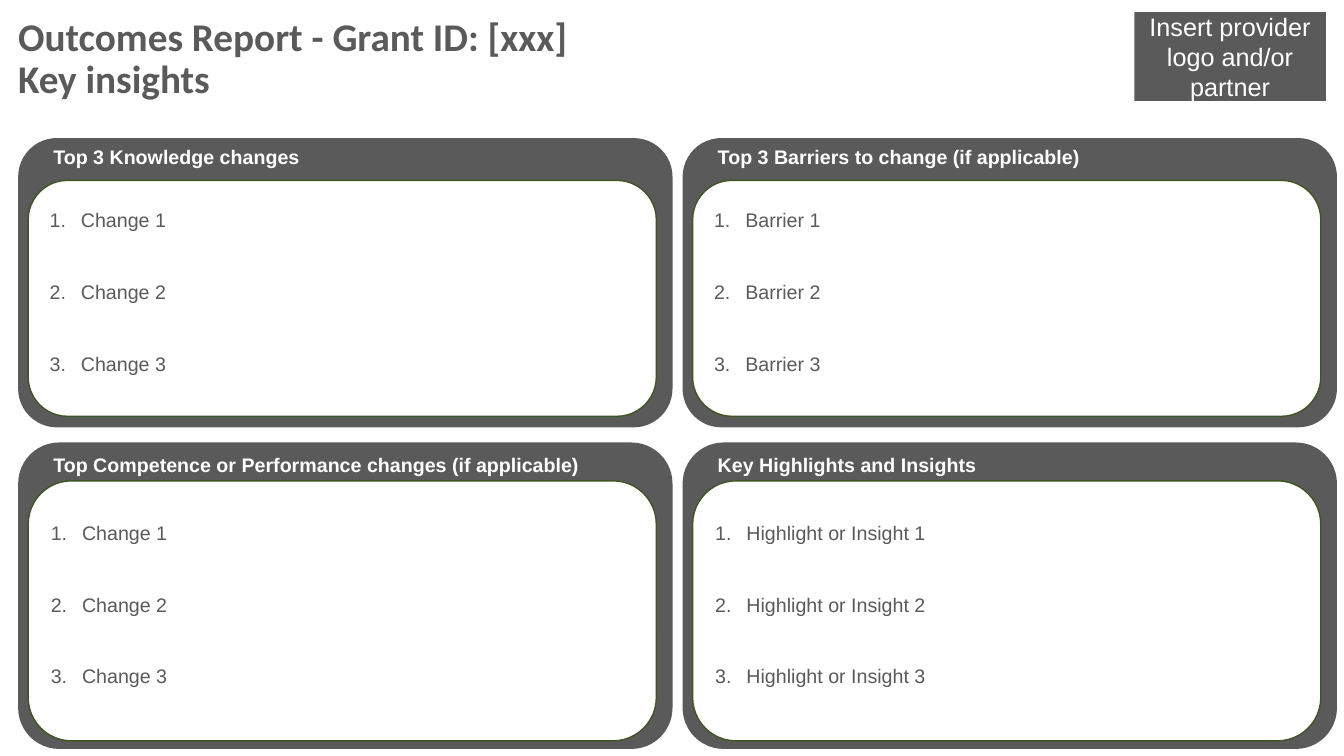
from lxml import etree
from pptx import Presentation
from pptx import util as u
from pptx.dml.color import RGBColor
from pptx.enum import shapes, text
from pptx.oxml.ns import qn

COLOURS = {"grey": "595A59", "white": "FFFFFF", "green": "405524"}
COLUMNS = [0.18, 6.77]
ROWS = [
    {"top": 1.37, "height": 2.87, "card_top": 1.79, "card_height": 2.34, "heading_top": 1.38},
    {"top": 4.39, "height": 3.04, "card_top": 4.77, "card_height": 2.58, "heading_top": 4.44},
]
PANELS = [
    (0, 0, "Top 3 Knowledge changes", "Change"),
    (0, 1, "Top Competence or Performance changes (if applicable)", "Change"),
    (1, 0, "Top 3 Barriers to change (if applicable)", "Barrier"),
    (1, 1, "Key Highlights and Insights", "Highlight or Insight"),
]


class InsightsSlide:
    """Draws styled elements on the current slide."""

    def __init__(self, slide):
        self.slide = slide

    def colour(self, name):
        return RGBColor.from_string(COLOURS[name])

    def add_run(self, paragraph, wording, size, colour, bold=False, font="Arial"):
        run = paragraph.add_run()
        run.text = wording
        run.font.name = font
        run.font.size = u.Pt(size)
        run.font.bold = bold
        run.font.color.rgb = self.colour(colour)

    def add_box(self, kind, box, fill, line=None, adjustment=None):
        shape = self.slide.shapes.add_shape(kind, *map(u.Inches, box))
        shape.shadow.inherit = False
        shape.fill.solid()
        shape.fill.fore_color.rgb = self.colour(fill)
        if line:
            shape.line.color.rgb = self.colour(line)
            shape.line.width = u.Pt(1)
        else:
            shape.line.fill.background()
        if adjustment is not None:
            shape.adjustments[0] = adjustment
        shape.text_frame.word_wrap = True
        shape.text_frame.vertical_anchor = text.MSO_ANCHOR.MIDDLE
        return shape

    def add_text(self, box, anchor):
        frame = self.slide.shapes.add_textbox(*map(u.Inches, box)).text_frame
        frame.word_wrap = True
        frame.vertical_anchor = anchor
        return frame

    def add_title(self, lines):
        frame = self.add_text((0.18, -0.15, 10.95, 1.48), text.MSO_ANCHOR.MIDDLE)
        frame.margin_left = frame.margin_right = frame.margin_top = frame.margin_bottom = 0
        paragraph = frame.paragraphs[0]
        paragraph.line_spacing = 0.9
        for index, line in enumerate(lines):
            if index:
                paragraph.add_line_break()
            self.add_run(paragraph, line, 28, "grey", True, "Calibri")

    def add_logo_box(self, wording):
        shape = self.add_box(shapes.MSO_SHAPE.RECTANGLE, (11.25, 0.12, 1.9, 0.88), "grey")
        paragraph = shape.text_frame.paragraphs[0]
        paragraph.alignment = text.PP_ALIGN.CENTER
        self.add_run(paragraph, wording, 18, "white")

    def add_numbered_list(self, frame, items):
        frame.margin_bottom = u.Inches(0.18)
        for index, item in enumerate(items):
            paragraph = frame.add_paragraph() if index else frame.paragraphs[0]
            paragraph.alignment = text.PP_ALIGN.LEFT
            if index:
                paragraph.space_before = u.Pt(34.5)
            self.add_run(paragraph, item, 14, "grey")
            properties = paragraph._p.get_or_add_pPr()
            properties.set("marL", str(u.Inches(0.31)))
            properties.set("indent", str(-u.Inches(0.31)))
            etree.SubElement(properties, qn("a:buAutoNum"), type="arabicPeriod")

    def add_panel(self, left, row, heading, items):
        rounded = shapes.MSO_SHAPE.ROUNDED_RECTANGLE
        self.add_box(rounded, (left, row["top"], 6.49, row["height"]), "grey", adjustment=0.134)
        card = self.add_box(
            rounded, (left + 0.1, row["card_top"], 6.23, row["card_height"]), "white", "green")
        self.add_numbered_list(card.text_frame, items)
        frame = self.add_text((left + 0.25, row["heading_top"], 5.72, 0.34), text.MSO_ANCHOR.BOTTOM)
        self.add_run(frame.paragraphs[0], heading, 14, "white", True)


def main():
    presentation = Presentation()
    presentation.slide_width = u.Inches(13.33)
    presentation.slide_height = u.Inches(7.5)
    slide = InsightsSlide(presentation.slides.add_slide(presentation.slide_layouts[6]))
    slide.add_title(["Outcomes Report - Grant ID: [xxx]", "Key insights"])
    slide.add_logo_box("Insert provider logo and/or partner")
    for column, row, heading, label in PANELS:
        items = [f"{label} {number}" for number in range(1, 4)]
        slide.add_panel(COLUMNS[column], ROWS[row], heading, items)
    presentation.save("out.pptx")


if __name__ == "__main__":
    main()
